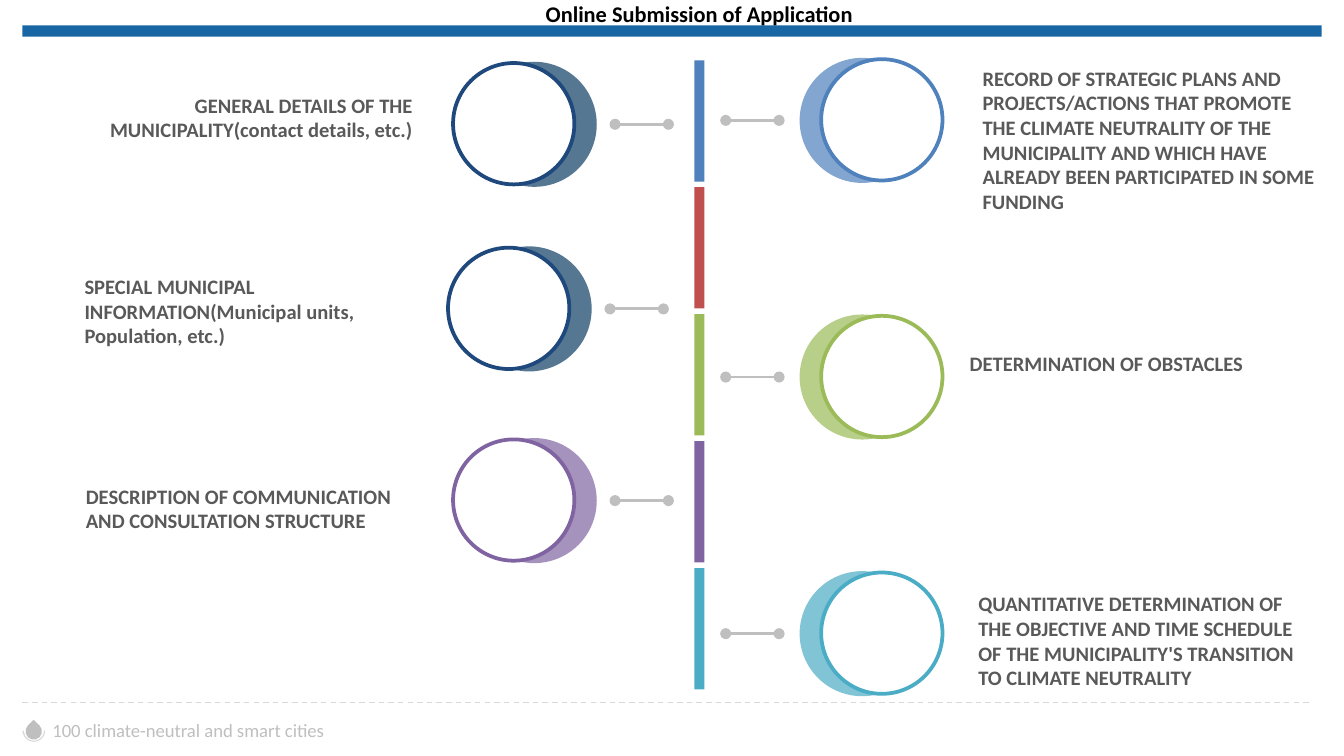
from dataclasses import dataclass

from lxml.etree import SubElement
from pptx import Presentation
from pptx.dml.color import RGBColor
from pptx.enum.dml import MSO_LINE
from pptx.enum.shapes import MSO_CONNECTOR, MSO_SHAPE
from pptx.enum.text import MSO_ANCHOR, PP_ALIGN
from pptx.oxml.ns import qn
from pptx.shapes.autoshape import Shape
from pptx.shapes.connector import Connector
from pptx.util import Pt

WHITE = RGBColor(0xFF, 0xFF, 0xFF)
BLACK = RGBColor(0x00, 0x00, 0x00)
HEADER = RGBColor(0x18, 0x66, 0xA4)
NAVY = RGBColor(0x1F, 0x49, 0x7D)
DEEP = RGBColor(0x0F, 0x3E, 0x65)
BLUE = RGBColor(0x4F, 0x81, 0xBD)
RED = RGBColor(0xC0, 0x50, 0x4D)
GREEN = RGBColor(0x9B, 0xBB, 0x59)
PURPLE = RGBColor(0x80, 0x64, 0xA2)
TEAL = RGBColor(0x4B, 0xAC, 0xC6)
TEXT = RGBColor(0x59, 0x59, 0x59)
GREY = RGBColor(0xBF, 0xBF, 0xBF)
PALE = RGBColor(0xD9, 0xD9, 0xD9)

HALO = 67
RING = 65
BAR_PITCH = 68
RIGHT_X, RIGHT_TOP, RIGHT_PITCH = 428.4, 31, 137.5


@dataclass(frozen=True)
class Box:
    left: float
    top: float
    width: float
    height: float

    def points(self) -> list[Pt]:
        return [Pt(v) for v in (self.left, self.top, self.width, self.height)]


@dataclass(frozen=True)
class Side:
    ring_dx: float
    line_dx: float


@dataclass(frozen=True)
class Station:
    side: Side
    x: float
    y: float
    halo: RGBColor
    ring: RGBColor
    text: str
    box: Box
    align: PP_ALIGN = PP_ALIGN.LEFT


LEFT = Side(-10, 76.8)
RIGHT = Side(11.5, -39.6)

STATIONS = [
    Station(LEFT, 252.7, 33.1, DEEP, NAVY,
            "GENERAL DETAILS OF THE MUNICIPALITY(contact details, etc.)",
            Box(10.1, 46.1, 218.2, 33.8), PP_ALIGN.RIGHT),
    Station(LEFT, 250, 132, DEEP, NAVY,
            "SPECIAL MUNICIPAL INFORMATION(Municipal units, Population, etc.)",
            Box(38.2, 143.3, 200, 47.5)),
    Station(LEFT, 252.7, 234.7, PURPLE, PURPLE,
            "DESCRIPTION OF COMMUNICATION AND CONSULTATION STRUCTURE",
            Box(38.9, 255.6, 200, 33.8)),
    Station(RIGHT, RIGHT_X, RIGHT_TOP, BLUE, BLUE,
            "RECORD OF STRATEGIC PLANS AND PROJECTS/ACTIONS THAT PROMOTE "
            "THE CLIMATE NEUTRALITY OF THE MUNICIPALITY AND WHICH HAVE "
            "ALREADY BEEN PARTICIPATED IN SOME FUNDING",
            Box(519.3, 31.7, 200, 87)),
    Station(RIGHT, RIGHT_X, RIGHT_TOP + RIGHT_PITCH, GREEN, GREEN,
            "DETERMINATION OF OBSTACLES",
            Box(403.2, 184.3, 270, 20.9), PP_ALIGN.RIGHT),
    Station(RIGHT, RIGHT_X, RIGHT_TOP + 2 * RIGHT_PITCH, TEAL, TEAL,
            "QUANTITATIVE DETERMINATION OF THE OBJECTIVE AND TIME SCHEDULE "
            "OF THE MUNICIPALITY'S TRANSITION TO CLIMATE NEUTRALITY",
            Box(517, 313.2, 193, 60.5)),
]


def add_filled(shapes, kind: MSO_SHAPE, box: Box, color: RGBColor) -> Shape:
    sp = shapes.add_shape(kind, *box.points())
    sp.shadow.inherit = False
    sp.fill.solid()
    sp.fill.fore_color.rgb = color
    sp.line.fill.background()
    return sp


def add_line(shapes, x1: float, x2: float, y: float,
             color: RGBColor, width: float) -> Connector:
    cx = shapes.add_connector(MSO_CONNECTOR.STRAIGHT, Pt(x1), Pt(y), Pt(x2), Pt(y))
    cx.line.color.rgb = color
    cx.line.width = Pt(width)
    SubElement(cx._element.spPr, qn("a:effectLst"))
    return cx


def write(sp: Shape, text: str, size: float, color: RGBColor, bold: bool = True,
          align: PP_ALIGN = PP_ALIGN.LEFT) -> None:
    tf = sp.text_frame
    frame = {"word_wrap": True, "vertical_anchor": MSO_ANCHOR.TOP}
    for name, value in frame.items():
        setattr(tf, name, value)
    p = tf.paragraphs[0]
    p.alignment = align
    r = p.add_run()
    r.text = text
    for name, value in {"name": "Calibri", "size": Pt(size), "bold": bold}.items():
        setattr(r.font, name, value)
    r.font.color.rgb = color


def add_station(shapes, st: Station) -> None:
    halo = add_filled(shapes, MSO_SHAPE.OVAL, Box(st.x, st.y, HALO, HALO), st.halo)
    clr = halo._element.spPr.find(qn("a:solidFill"))[0]
    SubElement(clr, qn("a:alpha"), val="70000")

    ring = add_filled(shapes, MSO_SHAPE.OVAL,
                      Box(st.x + st.side.ring_dx, st.y + 0.7, RING, RING), WHITE)
    ring.line.color.rgb = st.ring
    ring.line.width = Pt(2)

    x = st.x + st.side.line_dx
    cx = add_line(shapes, x, x + 28.6, st.y + HALO / 2, GREY, 1.5)
    ln = cx.line._get_or_add_ln()
    for end in ("a:headEnd", "a:tailEnd"):
        SubElement(ln, qn(end), type="oval")

    write(shapes.add_textbox(*st.box.points()), st.text, 11, TEXT, align=st.align)


def main() -> None:
    prs = Presentation()
    prs.slide_width, prs.slide_height = Pt(720), Pt(405)
    s = prs.slides.add_slide(prs.slide_layouts[5])
    shapes = s.shapes

    title = shapes.title
    title.left, title.top, title.width, title.height = Box(285.1, -3.6, 236.2, 21.6).points()
    write(title, "Online Submission of Application", 12, BLACK)

    add_filled(shapes, MSO_SHAPE.RECTANGLE, Box(12, 13.6, 696, 6), HEADER)
    add_line(shapes, 12, 702, 376.4, PALE, 0.75).line.dash_style = MSO_LINE.DASH

    drop = add_filled(shapes, MSO_SHAPE.TEAR, Box(13.7, 387.4, 8.8, 8.8), GREY)
    drop.rotation = 315
    arc = add_filled(shapes, MSO_SHAPE.BLOCK_ARC, Box(12, 385.2, 12.2, 12.2), PALE)
    arc.rotation = 180
    for i, value in enumerate((108, 214.95, 0.05)):
        arc.adjustments[i] = value
    write(shapes.add_textbox(*Box(21, 381.8, 321, 19.4).points()),
          "100 climate-neutral and smart cities", 10, GREY, bold=False)

    bars = shapes.add_group_shape().shapes
    for i, color in enumerate((BLUE, RED, GREEN, PURPLE, TEAL)):
        add_filled(bars, MSO_SHAPE.RECTANGLE,
                   Box(372, 32.3 + i * BAR_PITCH, 5.4, 65), color)

    for st in STATIONS:
        add_station(shapes, st)

    prs.save("out.pptx")


if __name__ == "__main__":
    main()
